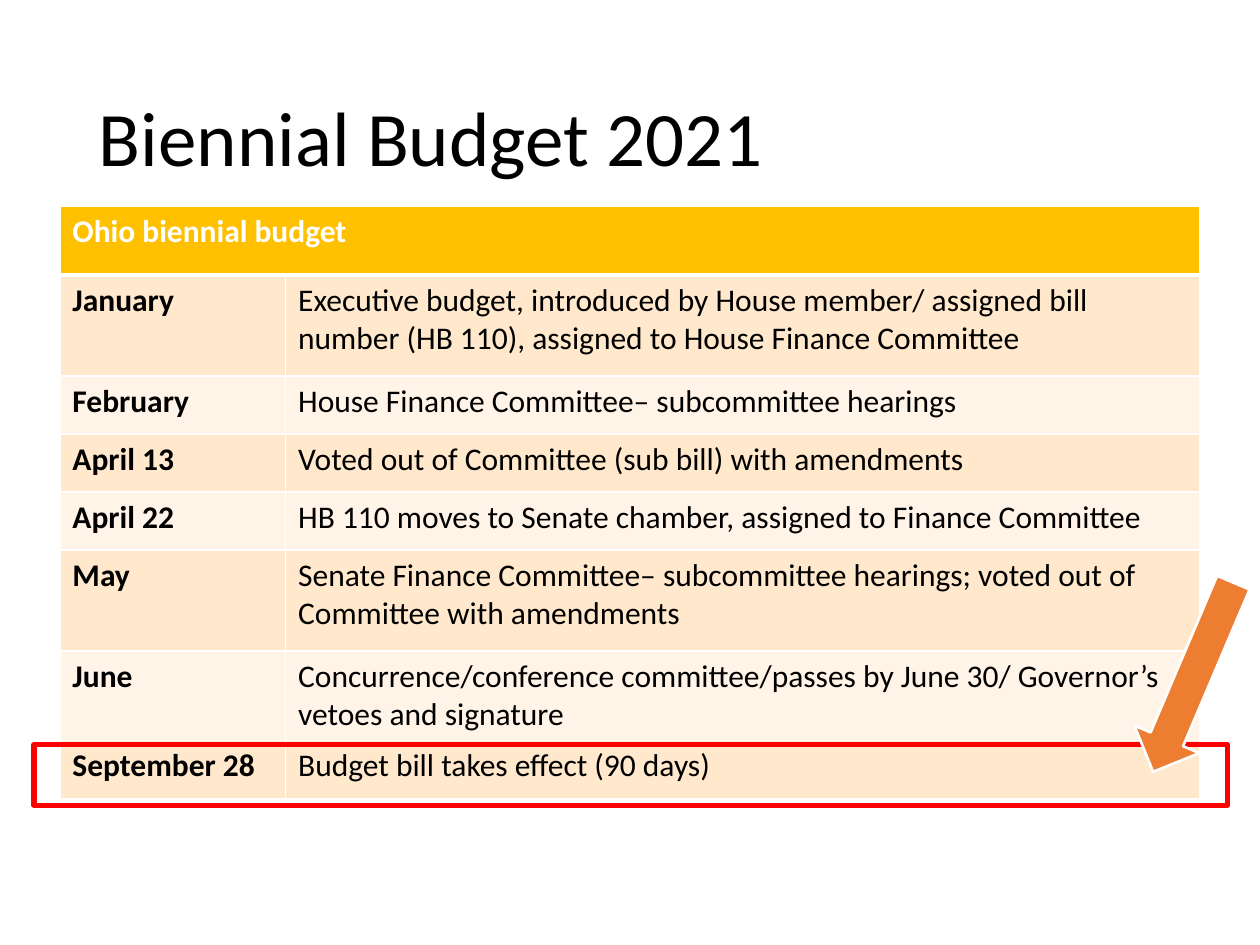
from lxml import etree
from pptx import Presentation
from pptx.dml.color import RGBColor
from pptx.enum import shapes, text
from pptx.oxml import ns
from pptx.util import Pt


def color(code):
    return RGBColor.from_string(code)


class Deck:
    font, ink, white = "Calibri", "000000", "FFFFFF"
    head, bands = "FFC000", ("FFE8CC", "FFF4E7")

    def __init__(self, wide, high):
        self.prs = Presentation()
        self.prs.slide_width, self.prs.slide_height = Pt(wide), Pt(high)
        self.slide = self.prs.slides.add_slide(self.prs.slide_layouts[6])

    def style(self, para, size, ink, bold=False):
        font = para.font
        font.name, font.size, font.bold = self.font, Pt(size), bold
        font.color.rgb = color(ink)

    def title(self, words, *box):
        frame = self.slide.shapes.add_textbox(*map(Pt, box)).text_frame
        frame.word_wrap = True
        frame.vertical_anchor = text.MSO_ANCHOR.MIDDLE
        para = frame.paragraphs[0]
        para.text, para.line_spacing = words, 0.9
        self.style(para, 44, self.ink)

    def edge(self, cell, side, width):
        props = cell._tc.get_or_add_tcPr()
        line = etree.SubElement(props, ns.qn("a:ln" + side), w=str(Pt(width)))
        fill = etree.SubElement(line, ns.qn("a:solidFill"))
        etree.SubElement(fill, ns.qn("a:srgbClr"), val=self.white)

    def table(self, left, top, cols, highs, rows):
        shape = self.slide.shapes.add_table(
            len(rows), len(cols), Pt(left), Pt(top), Pt(sum(cols)), Pt(sum(highs)))
        grid = shape.table
        for col, width in zip(grid.columns, cols):
            col.width = Pt(width)
        for row, high in zip(grid.rows, highs):
            row.height = Pt(high)
        grid.cell(0, 0).merge(grid.cell(0, 1))
        for i, row in enumerate(rows):
            for j, cell in enumerate(grid.rows[i].cells):
                # The line under the heading is heavier
                for side in "LRTB":
                    heavy = (i, side) in ((0, "B"), (1, "T"))
                    self.edge(cell, side, 3 if heavy else 1)
                cell.fill.solid()
                cell.fill.fore_color.rgb = color(
                    self.bands[(i - 1) % 2] if i else self.head)
                if j < len(row):
                    para = cell.text_frame.paragraphs[0]
                    para.text = row[j]
                    self.style(para, 18, self.ink if i else self.white, j == 0)

    def shape(self, kind, box, line, width, fill=None, turn=0):
        item = self.slide.shapes.add_shape(kind, *map(Pt, box))
        item.shadow.inherit = False
        item.rotation = turn
        item.line.color.rgb, item.line.width = color(line), Pt(width)
        if fill:
            item.fill.solid()
            item.fill.fore_color.rgb = color(fill)
        else:
            item.fill.background()


ROWS = [
    ("Ohio biennial budget",),
    ("January", "Executive budget, introduced by House member/ assigned bill "
                "number (HB 110), assigned to House Finance Committee"),
    ("February", "House Finance Committee– subcommittee hearings"),
    ("April 13", "Voted out of Committee (sub bill) with amendments"),
    ("April 22", "HB 110 moves to Senate chamber, assigned to Finance Committee"),
    ("May", "Senate Finance Committee– subcommittee hearings; voted out of "
            "Committee with amendments"),
    ("June", "Concurrence/conference committee/passes by June 30/ "
             "Governor’s vetoes and signature"),
    ("September 28", "Budget bill takes effect (90 days)"),
]


def main():
    deck = Deck(720, 540)

    # Title and timetable
    deck.title("Biennial Budget 2021", 49.5, 28.8, 621, 104.4)
    one, two = 33.2, 57.6
    deck.table(34.2, 117.7, (129, 522.5),
               (39.5, two, one, one, one, two, 51.2, one), ROWS)

    # Marks on the date of effect
    kind = shapes.MSO_SHAPE
    deck.shape(kind.RECTANGLE, (19.4, 425.5, 682, 34.6), "FF0000", 3)
    deck.shape(kind.DOWN_ARROW, (661.7, 328.3, 40.3, 117.4),
               deck.white, 1.5, "ED7D31", 23)

    deck.prs.save("out.pptx")


if __name__ == "__main__":
    main()
